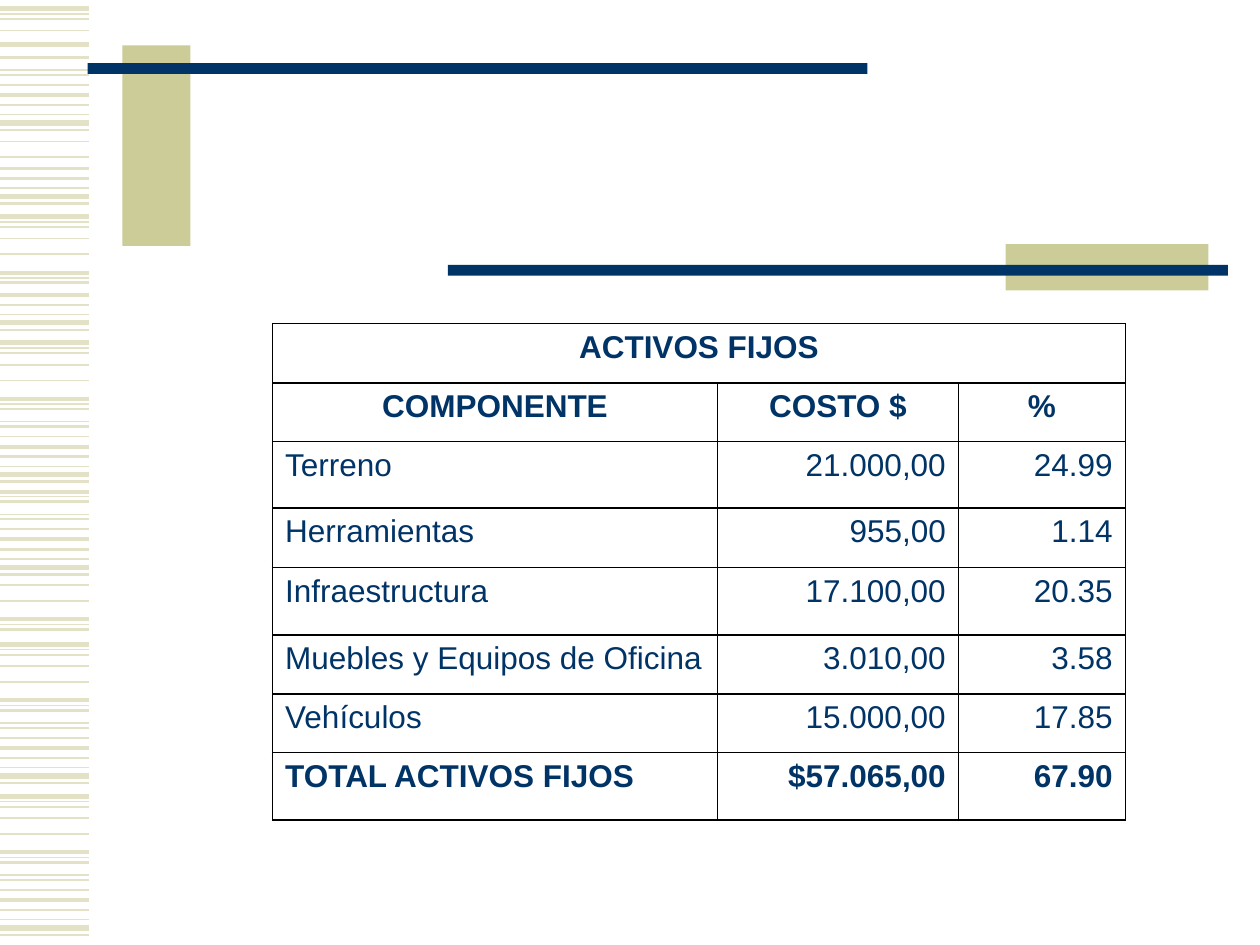
import pptx
import pptx.dml.color
import pptx.enum.shapes
import pptx.enum.text
import pptx.oxml
import pptx.oxml.ns
import pptx.util

Pt = pptx.util.Pt
ALIGN = pptx.enum.text.PP_ALIGN

NAVY, OLIVE, PALE, BLACK = "003366", "CCCC99", "E3E2C7", "000000"
NAMESPACE = pptx.oxml.ns.nsdecls("a")

# Stripe pattern: (offset from its top, line weight)
PATTERN = [(0, 3), (3, 0.75), (6, 1), (12.5, 1), (21.5, 1), (32, 2.25),
           (35, 0.75), (37.8, 1.5), (45, 0.75), (47.8, 1.5), (53.5, 1),
           (59.3, 2.25), (65, 1.5), (70.5, 0.75), (75.3, 3), (79.3, 1.5)]
# Each run of the pattern: top, first stripe, stripe after the last
RUNS = [(5, 0, 4), (-50, 14, 15), (-5, 7, 16), (68.4, 3, 5), (37, 11, 16),
        (123.8, 0, 8), (109.2, 11, 16), (195.9, 0, 16), (248.9, 5, 16),
        (321.8, 3, 8), (368.2, 0, 16), (455, 0, 16)]

# Bars: left, top, width, height, colour
BARS = [(70, 26, 38.8, 114.5, OLIVE), (50, 36, 445.7, 6.2, NAVY),
        (574.6, 139.5, 116, 26.5, OLIVE), (256, 151.3, 445.7, 6.2, NAVY)]

COLUMN_WIDTHS = [254.2, 137.7, 95.4]
ROW_HEIGHTS = [33.8, 33.4, 38.2, 33.8, 38.7, 33.8, 33.4, 38.7]
ROWS = [("ACTIVOS FIJOS", "", ""),
        ("COMPONENTE", "COSTO $", "%"),
        ("Terreno", "21.000,00", "24.99"),
        ("Herramientas", "955,00", "1.14"),
        ("Infraestructura", "17.100,00", "20.35"),
        ("Muebles y Equipos de Oficina", "3.010,00", "3.58"),
        ("Vehículos", "15.000,00", "17.85"),
        ("TOTAL ACTIVOS FIJOS", "$57.065,00", "67.90")]


def color(value):
    return pptx.dml.color.RGBColor.from_string(value)


def add_stripe(page, y, weight):
    line = page.shapes.add_connector(
        pptx.enum.shapes.MSO_CONNECTOR.STRAIGHT, 0, Pt(y), Pt(51), Pt(y))
    line.line.color.rgb = color(PALE)
    line.line.width = Pt(weight)
    line._element.spPr.append(
        pptx.oxml.parse_xml(f"<a:effectLst {NAMESPACE}/>"))


def add_bar(page, left, top, width, height, fill):
    bar = page.shapes.add_shape(pptx.enum.shapes.MSO_SHAPE.RECTANGLE,
                                Pt(left), Pt(top), Pt(width), Pt(height))
    bar.shadow.inherit = False
    bar.fill.solid()
    bar.fill.fore_color.rgb = color(fill)
    bar.line.fill.background()


def write_text(frame, text, size=18, bold=False, align=ALIGN.LEFT, hanging=27):
    para = frame.paragraphs[0]
    para.alignment = align
    properties = para._p.get_or_add_pPr()
    properties.set("marL", str(int(Pt(hanging))))
    properties.set("indent", str(-int(Pt(hanging))))
    span = para.add_run()
    span.text = text
    span.font.name = "Arial"
    span.font.size = Pt(size)
    span.font.bold = bold
    span.font.color.rgb = color(NAVY)


def add_borders(cell, weight=1):
    properties = cell._tc.get_or_add_tcPr()
    for position, side in enumerate(("a:lnL", "a:lnR", "a:lnT", "a:lnB")):
        border = pptx.oxml.parse_xml(
            f'<{side} {NAMESPACE} w="{int(Pt(weight))}">'
            f'<a:solidFill><a:srgbClr val="{BLACK}"/></a:solidFill></{side}>')
        properties.insert(position, border)


def add_assets_table(page):
    table = page.shapes.add_table(
        len(ROWS), len(COLUMN_WIDTHS), Pt(155.8), Pt(185),
        Pt(sum(COLUMN_WIDTHS)), Pt(sum(ROW_HEIGHTS))).table
    table.first_row = table.horz_banding = False
    for column, width in zip(table.columns, COLUMN_WIDTHS):
        column.width = Pt(width)
    for row, height in zip(table.rows, ROW_HEIGHTS):
        row.height = Pt(height)
    table.cell(0, 0).merge(table.cell(0, len(COLUMN_WIDTHS) - 1))

    for r, texts in enumerate(ROWS):
        heading = r < 2
        for c, text in enumerate(texts):
            cell = table.cell(r, c)
            cell.fill.background()
            add_borders(cell)
            if text:
                body_align = ALIGN.RIGHT if c else ALIGN.LEFT
                write_text(cell.text_frame, text,
                           bold=heading or r == len(ROWS) - 1,
                           align=ALIGN.CENTER if heading else body_align)


def main():
    deck = pptx.Presentation()
    deck.slide_width, deck.slide_height = Pt(720), Pt(540)
    page = deck.slides.add_slide(deck.slide_layouts[6])

    # Striped left edge
    for top, first, end in RUNS:
        for offset, weight in PATTERN[first:end]:
            add_stripe(page, top + offset, weight)

    # Decorative bars
    for bar in BARS:
        add_bar(page, *bar)

    # Fixed assets
    add_assets_table(page)

    deck.save("out.pptx")


if __name__ == "__main__":
    main()
